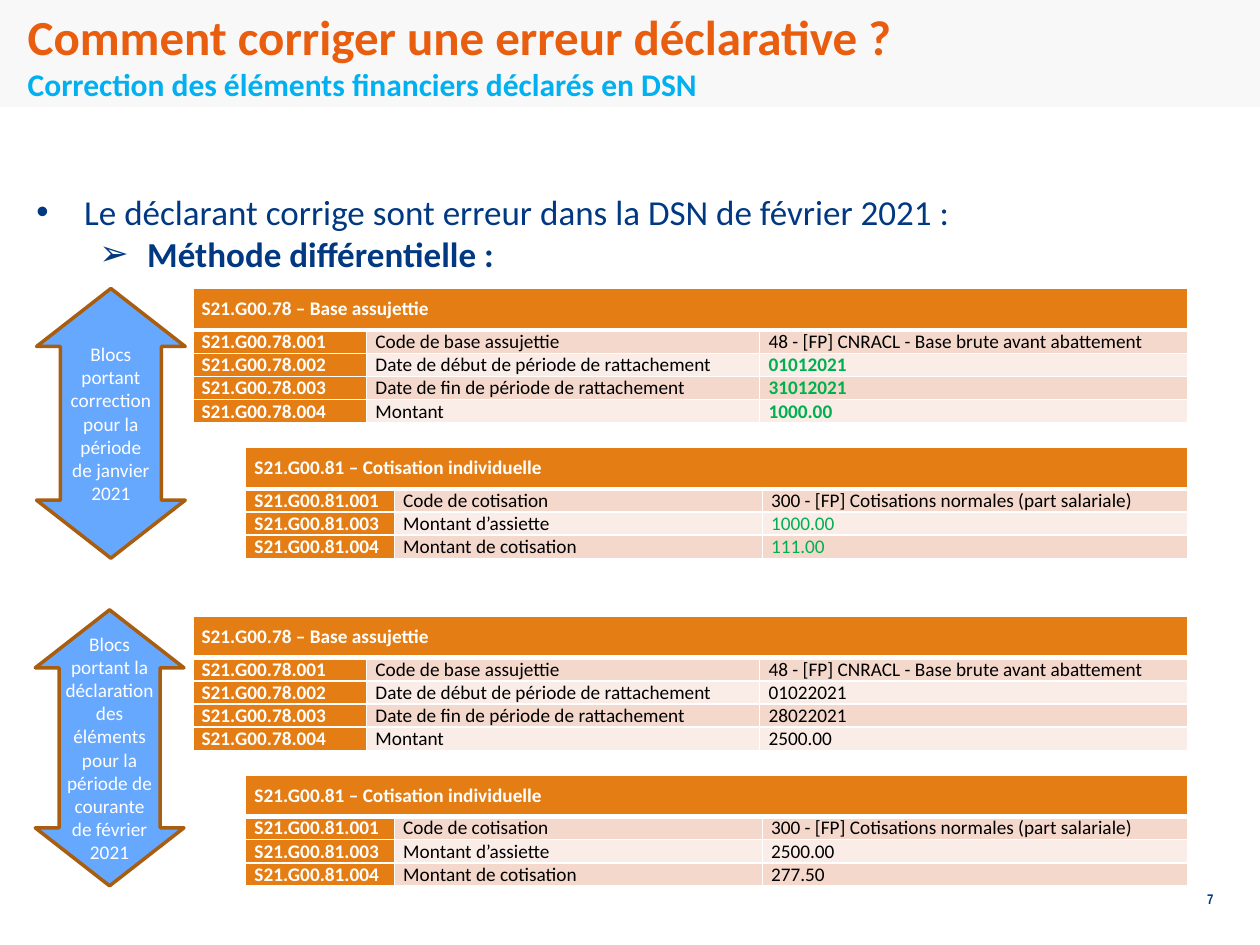
from lxml.etree import SubElement
from pptx import Presentation
from pptx.dml.color import RGBColor
from pptx.enum.shapes import MSO_SHAPE
from pptx.enum.text import MSO_ANCHOR, MSO_AUTO_SIZE, PP_ALIGN
from pptx.oxml.ns import qn
from pptx.util import Inches, Pt

ORANGE, NAVY, GREEN, BLACK, WHITE = "E47E14", "003882", "00B050", "000000", "FFFFFF"
BANDS = ("F5D8CC", "FAECE7")


def color(value):
    return RGBColor.from_string(value)


class SlideBuilder:
    font = "Calibri"
    columns, rows = 100, 75
    small = 11

    def __init__(self, deck):
        self.unit_x = deck.slide_width / self.columns
        self.unit_y = deck.slide_height / self.rows
        self.page = deck.slides.add_slide(deck.slide_layouts[5])

    def across(self, count):
        return round(count * self.unit_x)

    def down(self, count):
        return round(count * self.unit_y)

    def area(self, left, top, width, height):
        return self.across(left), self.down(top), self.across(width), self.down(height)

    def span(self, para, text, size, tint, bold=False, font=None):
        span = para.add_run()
        span.text = text
        span.font.name = font or self.font
        span.font.size = Pt(size)
        span.font.bold = bold
        span.font.color.rgb = color(tint)

    def band(self, area, tint):
        band = self.page.shapes.add_shape(MSO_SHAPE.RECTANGLE, *self.area(*area))
        band.shadow.inherit = False
        band.fill.solid()
        band.fill.fore_color.rgb = color(tint)
        band.line.fill.background()
        return band

    def title(self, area, heading, subheading):
        title = self.page.shapes.title
        title.left, title.top, title.width, title.height = self.area(*area)
        frame = title.text_frame
        frame.auto_size = MSO_AUTO_SIZE.NONE
        frame.word_wrap = True
        frame.vertical_anchor = MSO_ANCHOR.BOTTOM
        frame.margin_top = 0
        frame.margin_bottom = Inches(0.02)
        para = frame.paragraphs[0]
        para.alignment = PP_ALIGN.LEFT
        self.span(para, heading, 28, "E95D0F", True)
        para.add_line_break()
        self.span(para, subheading, 18, "00B0F0", True)

    def text_box(self, area):
        box = self.page.shapes.add_textbox(*self.area(*area))
        box.text_frame.word_wrap = True
        return box.text_frame

    def page_number(self, area, number):
        para = self.text_box(area).paragraphs[0]
        para.alignment = PP_ALIGN.RIGHT
        self.span(para, number, 8, NAVY, True, "Arial Narrow")

    def bullets(self, area, items):
        frame = self.text_box(area)
        for index, (text, mark, level, indent, bold) in enumerate(items):
            para = frame.add_paragraph() if index else frame.paragraphs[0]
            para.level = level
            para.alignment = PP_ALIGN.JUSTIFY
            properties = para._p.get_or_add_pPr()
            properties.set("marL", str(Inches(indent)))
            properties.set("indent", str(Inches(-0.38)))
            SubElement(properties, qn("a:buFont"), typeface="Arial")
            SubElement(properties, qn("a:buChar"), char=mark)
            self.span(para, text, 20, NAVY, bold)

    def borders(self, cell, top, bottom):
        properties = cell._tc.get_or_add_tcPr()
        for side, points in (("lnL", 1), ("lnR", 1), ("lnT", top), ("lnB", bottom)):
            line = SubElement(properties, qn(f"a:{side}"), w=str(Pt(points)))
            fill = SubElement(line, qn("a:solidFill"))
            SubElement(fill, qn("a:srgbClr"), val=WHITE)

    def block_table(self, left, top, widths, heading, entries, value_tint, value_bold):
        header_height, row_height = 3.3, 1.83
        height = header_height + row_height * len(entries)
        area = self.area(left, top, sum(widths), height)
        table = self.page.shapes.add_table(len(entries) + 1, 3, *area).table
        table.horz_banding = False
        for column, width in zip(table.columns, widths):
            column.width = self.across(width)
        for index, row in enumerate(table.rows):
            row.height = self.down(row_height if index else header_height)
        table.cell(0, 0).merge(table.cell(0, 2))
        for row, texts in enumerate([(heading, "", ""), *entries]):
            for column, text in enumerate(texts):
                cell = table.cell(row, column)
                label = row == 0 or column == 0
                value = row > 1 and column == 2
                self.borders(cell, 3 if row == 1 else 1, 1 if row else 3)
                cell.fill.solid()
                cell.fill.fore_color.rgb = color(ORANGE if label else BANDS[(row - 1) % 2])
                cell.vertical_anchor = MSO_ANCHOR.MIDDLE
                cell.margin_left = cell.margin_right = Inches(0.07)
                cell.margin_top = cell.margin_bottom = 0
                para = cell.text_frame.paragraphs[0]
                para.alignment = PP_ALIGN.LEFT if (row, column) == (1, 2) else PP_ALIGN.JUSTIFY
                if text:
                    tint = WHITE if label else value_tint if value else BLACK
                    self.span(para, text, self.small, tint, label or (value and value_bold))

    def period_arrow(self, area, text, side_margin):
        arrow = self.page.shapes.add_shape(MSO_SHAPE.UP_DOWN_ARROW, *self.area(*area))
        arrow.shadow.inherit = False
        arrow.adjustments[0], arrow.adjustments[1] = 0.68, 0.39
        for number, guide in enumerate(arrow._element.iter(qn("a:gd")), start=1):
            guide.set("name", f"adj{number}")
        arrow.fill.solid()
        arrow.fill.fore_color.rgb = color("67A8FF")
        arrow.line.color.rgb = color("A95D0F")
        arrow.line.width = Pt(2)
        frame = arrow.text_frame
        frame.word_wrap = True
        frame.vertical_anchor = MSO_ANCHOR.MIDDLE
        frame.margin_left = frame.margin_right = Inches(side_margin)
        frame.margin_top = frame.margin_bottom = Inches(0.04)
        para = frame.paragraphs[0]
        para.alignment = PP_ALIGN.CENTER
        self.span(para, text, self.small, WHITE)


def main():
    deck = Presentation()
    deck.slide_width, deck.slide_height = Inches(10), Inches(7.5)
    builder = SlideBuilder(deck)

    header = builder.band((0, 0, 100, 8.5), "F8F8F8")
    builder.page.shapes.title._element.addprevious(header._element)
    builder.page_number((74, 70.2, 23.3, 4), "7")
    builder.title((1.2, 0, 94.8, 8.4), "Comment corriger une erreur déclarative ?",
                  "Correction des éléments financiers déclarés en DSN")
    builder.bullets((1.9, 14.6, 95.5, 7.7), [
        ("Le déclarant corrige sont erreur dans la DSN de février 2021 :", "•", 1, 0.38, False),
        ("Méthode différentielle :", "➢", 2, 0.88, True),
    ])

    periods = [
        (22.9, ("01012021", "31012021", "1000.00"), "111.00", GREEN, True),
        (48.9, ("01022021", "28022021", "2500.00"), "277.50", BLACK, False),
    ]
    for top, (start, end, amount), contribution, tint, bold in periods:
        builder.block_table(15.3, top, (13.8, 31.2, 34), "S21.G00.78 – Base assujettie", [
            ("S21.G00.78.001", "Code de base assujettie",
             "48 - [FP] CNRACL - Base brute avant abattement"),
            ("S21.G00.78.002", "Date de début de période de rattachement", start),
            ("S21.G00.78.003", "Date de fin de période de rattachement", end),
            ("S21.G00.78.004", "Montant", amount),
        ], tint, bold)
        builder.block_table(19.5, top + 12.6, (11.8, 29.2, 33.8),
                            "S21.G00.81 – Cotisation individuelle", [
            ("S21.G00.81.001", "Code de cotisation",
             "300 - [FP] Cotisations normales (part salariale)"),
            ("S21.G00.81.003", "Montant d’assiette", amount),
            ("S21.G00.81.004", "Montant de cotisation", contribution),
        ], tint, False)

    builder.period_arrow((2.9, 22.9, 11.8, 21.4),
                         "Blocs portant correction pour la période de janvier 2021", 0.08)
    builder.period_arrow((2.8, 48.4, 11.8, 21.9),
                         "Blocs portant la déclaration des éléments pour la période "
                         "de courante de février 2021", 0.04)
    deck.save("out.pptx")


if __name__ == "__main__":
    main()
